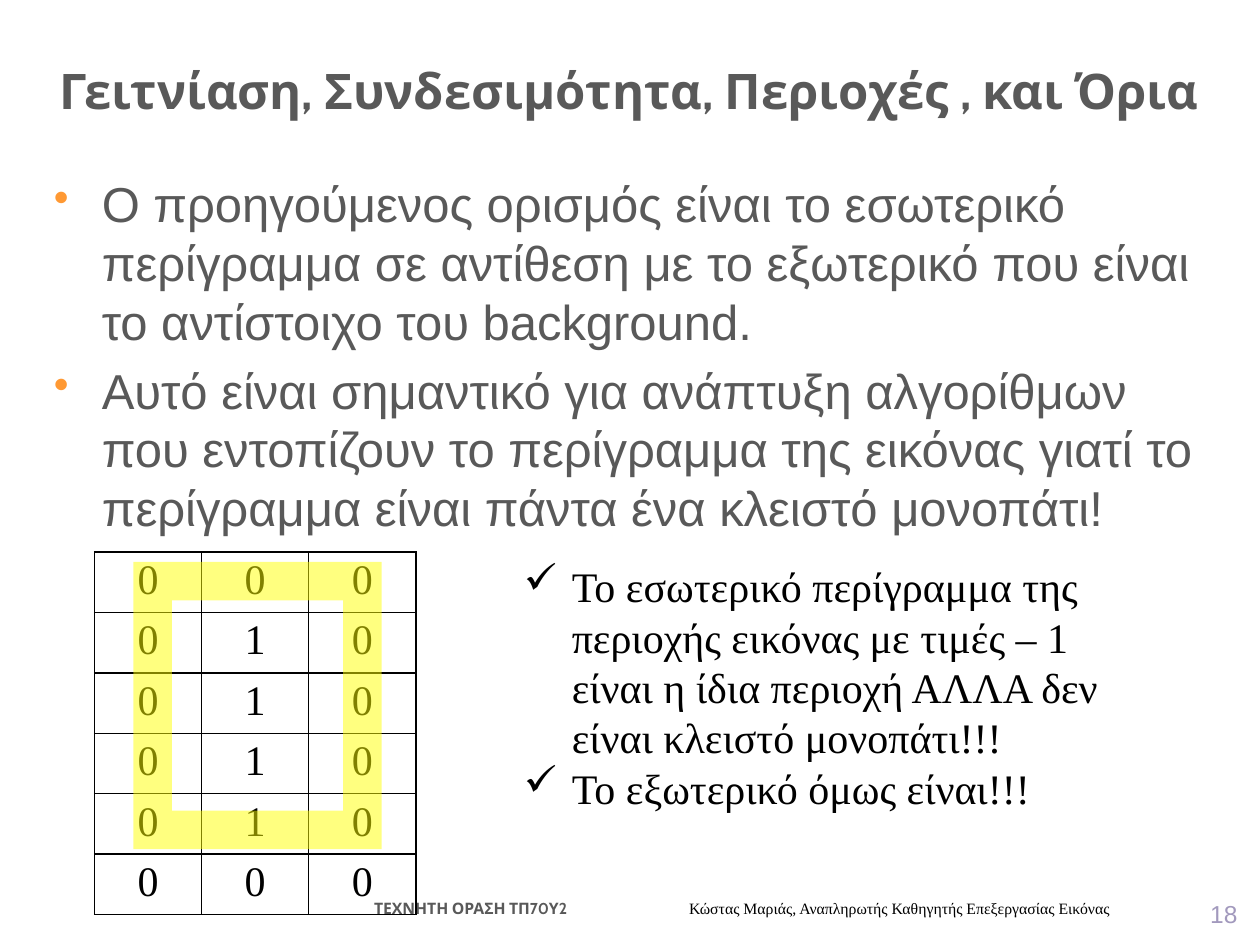
from dataclasses import dataclass

from pptx import Presentation
from pptx.dml.color import RGBColor as RGB
from pptx.enum.shapes import MSO_SHAPE as SHAPE
from pptx.enum.text import MSO_ANCHOR as ANCHOR, PP_ALIGN as ALIGN
from pptx.oxml import parse_xml
from pptx.oxml.ns import nsdecls, qn
from pptx.util import Inches, Pt
from lxml.etree import SubElement


@dataclass(frozen=True)
class Theme:
    grey: RGB = RGB(0x59, 0x59, 0x59)
    black: RGB = RGB(0, 0, 0)
    lilac: RGB = RGB(0xA2, 0x99, 0xBD)
    yellow: RGB = RGB(0xFF, 0xFF, 0)
    orange: str = "FF9933"
    heading: str = "Cabin"
    sans: str = "Arial"
    serif: str = "Times New Roman"
    large: Pt = Pt(28)
    medium: Pt = Pt(24)
    number: Pt = Pt(14)
    small: Pt = Pt(9)


theme = Theme()


def style(font, face, size, color, bold=False):
    font.name, font.size, font.bold = face, size, bold
    font.color.rgb = color


def add_text(box, lines, face, size, color, bold=False, align=ALIGN.LEFT,
             anchor=ANCHOR.TOP, bullet="", gap=0):
    frame = slide.shapes.add_textbox(*map(Inches, box)).text_frame
    frame.word_wrap = True
    frame.vertical_anchor = anchor
    for i, line in enumerate(lines):
        paragraph = frame.paragraphs[0] if i == 0 else frame.add_paragraph()
        paragraph.text = line
        paragraph.alignment = align
        if i:
            paragraph.space_before = Pt(gap)
        if bullet:
            props = paragraph._p.get_or_add_pPr()
            props.set("marL", str(Inches(0.38)))
            props.set("indent", str(-Inches(0.38)))
            if bullet == "•":
                tint = SubElement(props, qn("a:buClr"))
                SubElement(tint, qn("a:srgbClr"), val=theme.orange)
                SubElement(props, qn("a:buSzPct"), val="90000")
            SubElement(props, qn("a:buChar"), char=bullet)
        style(paragraph.font, face, size, color, bold)
    return frame


deck = Presentation()
deck.slide_width, deck.slide_height = Inches(10), Inches(7.5)
slide = deck.slides.add_slide(deck.slide_layouts[6])

add_text((8.45, 7.11, 1.47, 0.31), ["18"], theme.sans, theme.number, theme.lilac,
         align=ALIGN.RIGHT, anchor=ANCHOR.BOTTOM)

footer = add_text((2.87, 7.08, 6.79, 0.25), ["ΤΕΧΝΗΤΗ ΟΡΑΣΗ ΤΠ70Υ2\t\t"],
                  theme.heading, theme.small, theme.grey, bold=True)
author = footer.paragraphs[0].add_run()
author.text = "Κώστας Μαριάς, Αναπληρωτής Καθηγητής Επεξεργασίας Εικόνας"
style(author.font, theme.serif, theme.small, theme.black)

add_text((0.17, 0.25, 9.64, 0.75), ["Γειτνίαση, Συνδεσιμότητα, Περιοχές , και Όρια"],
         theme.heading, theme.large, theme.grey, bold=True,
         align=ALIGN.CENTER, anchor=ANCHOR.BOTTOM)

add_text((0.33, 1.33, 9.33, 5.75), [
    "Ο προηγούμενος ορισμός είναι το εσωτερικό περίγραμμα σε αντίθεση με το "
    "εξωτερικό που είναι το αντίστοιχο του background.",
    "Αυτό είναι σημαντικό για ανάπτυξη αλγορίθμων που εντοπίζουν το περίγραμμα "
    "της εικόνας γιατί το περίγραμμα είναι πάντα ένα κλειστό μονοπάτι!",
], theme.sans, theme.large, theme.grey, bullet="•", gap=5.6)

pixels = ["000", "010", "010", "010", "010", "000"]
grid = slide.shapes.add_table(len(pixels), 3, Inches(0.75), Inches(4.38),
                              Inches(2.55), Inches(2.43)).table
grid.first_row = grid.horz_banding = False
for r, values in enumerate(pixels):
    for c, value in enumerate(values):
        cell = grid.cell(r, c)
        cell.margin_top = cell.margin_bottom = Inches(0.04)
        cell.text = value
        digit = cell.text_frame.paragraphs[0]
        digit.alignment = ALIGN.CENTER
        style(digit.font, theme.serif, theme.medium, theme.black)
        borders = cell._tc.get_or_add_tcPr()
        for side in ("lnL", "lnR", "lnT", "lnB"):
            borders.append(parse_xml(
                f'<a:{side} {nsdecls("a")} w="{Pt(1)}"><a:solidFill>'
                f'<a:srgbClr val="{theme.black}"/></a:solidFill></a:{side}>'))
        cell.fill.background()

add_text((4.06, 4.4, 5, 2.12), [
    "Το εσωτερικό περίγραμμα της περιοχής εικόνας με τιμές – 1 είναι η ίδια "
    "περιοχή ΑΛΛΑ δεν είναι κλειστό μονοπάτι!!!",
    "Το εξωτερικό όμως είναι!!!",
], theme.serif, theme.medium, theme.black, bullet="✓")

contour = slide.shapes.add_shape(SHAPE.FRAME, Inches(1.06), Inches(4.46),
                                 Inches(1.97), Inches(2.28))
contour.adjustments[0] = 0.155
contour.shadow.inherit = False
contour.line.fill.background()
contour.fill.solid()
contour.fill.fore_color.rgb = theme.yellow
tint = contour.fill._xPr.find(qn("a:solidFill"))[0]
SubElement(tint, qn("a:alpha"), val="50000")

deck.save("out.pptx")
